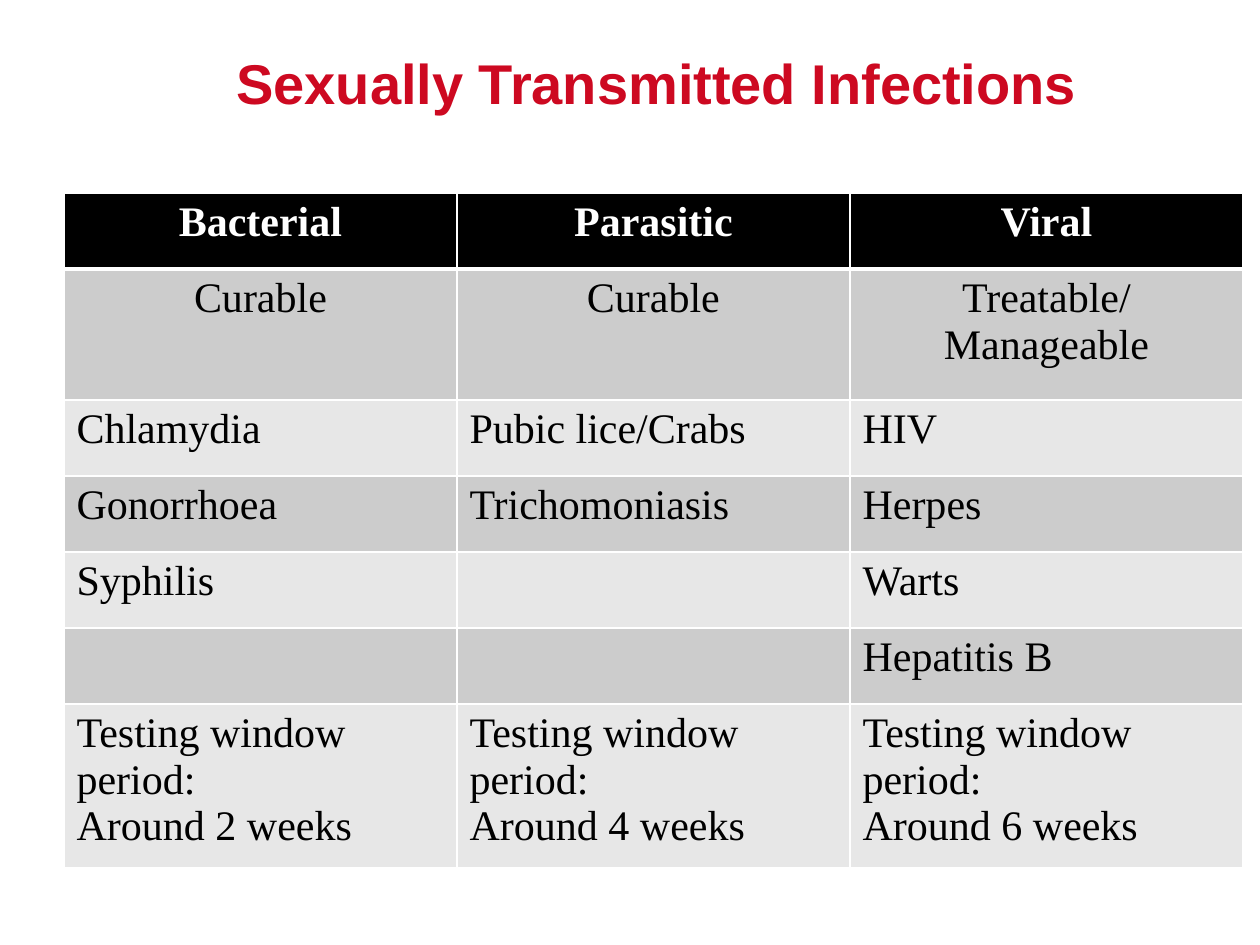
import pptx
import pptx.dml.color
import pptx.enum.text
import pptx.oxml
import pptx.oxml.ns
import pptx.util

# Content
TITLE = "Sexually Transmitted Infections"
ROWS = [
    ("Bacterial", "Parasitic", "Viral"),
    ("Curable", "Curable", "Treatable/Manageable"),
    ("Chlamydia", "Pubic lice/Crabs", "HIV"),
    ("Gonorrhoea", "Trichomoniasis", "Herpes"),
    ("Syphilis", "", "Warts"),
    ("", "", "Hepatitis B"),
    tuple(f"Testing window period:\nAround {n} weeks" for n in (2, 4, 6)),
]

# Layout in px, 126 to the inch
TITLE_BOX = (95, 42, 1124, 157)
LEFT, TOP, COL_W = 64, 193, 393
ROW_H = [76, 131, 76, 76, 76, 76, 151]

# Formats
TITLE_FONT = {"name": "Arial", "size": pptx.util.Pt(32), "bold": True}
HEAD_FONT = {"name": "Times New Roman", "size": pptx.util.Pt(24), "bold": True}
BODY_FONT = {**HEAD_FONT, "bold": False}
BANDS = ("E7E7E7", "CCCCCC")
CENTER = pptx.enum.text.PP_ALIGN.CENTER


def px(n):
    return pptx.util.Emu(round(n * 914400 / 126))


def rgb(value):
    return pptx.dml.color.RGBColor.from_string(value)


def style(font, formats, color):
    for name, value in formats.items():
        setattr(font, name, value)
    font.color.rgb = rgb(color)


def add_borders(cell, widths):
    tc_pr = cell._tc.get_or_add_tcPr()
    for side, width in widths.items():
        tc_pr.append(pptx.oxml.parse_xml(
            f'<a:ln{side} {pptx.oxml.ns.nsdecls("a")} w="{pptx.util.Pt(width)}">'
            '<a:solidFill><a:srgbClr val="FFFFFF"/></a:solidFill>'
            f'</a:ln{side}>'))


prs = pptx.Presentation()
prs.slide_width, prs.slide_height = px(1260), px(945)
s = prs.slides.add_slide(prs.slide_layouts[6])

# Title
tf = s.shapes.add_textbox(*map(px, TITLE_BOX)).text_frame
tf.word_wrap = True
p = tf.paragraphs[0]
p.text, p.alignment = TITLE, CENTER
style(p.font, TITLE_FONT, "CD0921")

# Table
n_cols = len(ROWS[0])
table = s.shapes.add_table(len(ROWS), n_cols, px(LEFT), px(TOP),
                           px(COL_W * n_cols), px(sum(ROW_H))).table
for col in table.columns:
    col.width = px(COL_W)
for i, (texts, height) in enumerate(zip(ROWS, ROW_H)):
    table.rows[i].height = px(height)
    head = i == 0
    for j, text in enumerate(texts):
        cell = table.cell(i, j)
        add_borders(cell, {"L": 1, "R": 1, "T": 3 if i == 1 else 1, "B": 3 if head else 1})
        cell.fill.solid()
        cell.fill.fore_color.rgb = rgb("000000" if head else BANDS[i % 2])
        cell.text_frame.text = text
        for p in cell.text_frame.paragraphs:
            if i < 2:
                p.alignment = CENTER
            style(p.font, HEAD_FONT if head else BODY_FONT, "FFFFFF" if head else "000000")

prs.save("out.pptx")
